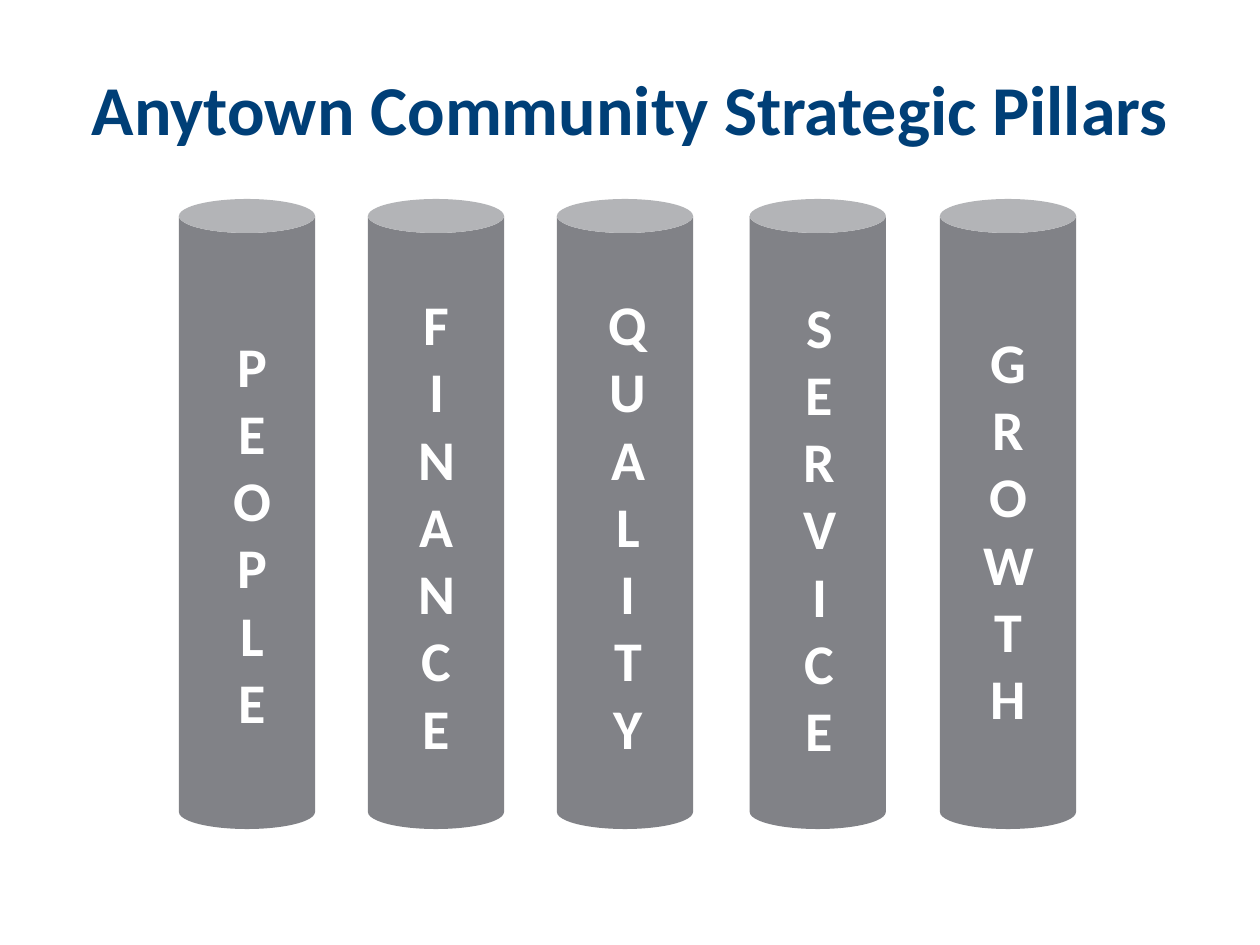
from pptx import Presentation
from pptx.dml.color import RGBColor
from pptx.enum.shapes import MSO_SHAPE as SHAPE
from pptx.enum.text import MSO_ANCHOR as ANCHOR, MSO_AUTO_SIZE as AUTO_SIZE, PP_ALIGN as ALIGN
from pptx.util import Inches, Pt

NAVY = RGBColor(0x00, 0x3F, 0x77)
GRAY = RGBColor(0x81, 0x82, 0x87)
WHITE = RGBColor(0xFF, 0xFF, 0xFF)
FONT = "Calibri"

PILLAR_TOP, PILLAR_WIDTH, PILLAR_HEIGHT = 1.58, 1.08, 5
LABEL_WIDTH = 0.67
PILLARS = [
    ("PEOPLE", 1.42, 0.25, 1.0),
    ("FINANCE", 2.92, 0.21, 0.67),
    ("QUALITY", 4.42, 0.23, 0.67),
    ("SERVICE", 5.95, 0.22, 0.69),
    ("GROWTH", 7.46, 0.21, 0.97),
]


def add_run(p, text, size, color):
    """Add a bold run to a centred paragraph."""
    p.alignment = ALIGN.CENTER
    r = p.add_run()
    r.text = text
    r.font.name = FONT
    r.font.size = Pt(size)
    r.font.bold = True
    r.font.color.rgb = color


def add_title(slide, text, left, top, width, height):
    """Place and format the title placeholder."""
    sp = slide.shapes.title
    sp.left, sp.top = Inches(left), Inches(top)
    sp.width, sp.height = Inches(width), Inches(height)
    tf = sp.text_frame
    tf.word_wrap = True
    tf.auto_size = AUTO_SIZE.NONE
    tf.vertical_anchor = ANCHOR.MIDDLE
    p = tf.paragraphs[0]
    p.line_spacing = 0.75
    add_run(p, text, 40, NAVY)


def add_pillar(slide, word, left, top, width, height, label_dx, label_dy):
    """Group a can with its word set one letter to a line."""
    shapes = slide.shapes.add_group_shape().shapes
    can = shapes.add_shape(SHAPE.CAN, Inches(left), Inches(top), Inches(width), Inches(height))
    can.shadow.inherit = False
    can.fill.solid()
    can.fill.fore_color.rgb = GRAY
    can.line.fill.background()

    label_height = 0.1 + 0.54 * len(word)
    label = shapes.add_textbox(Inches(left + label_dx), Inches(top + label_dy),
                               Inches(LABEL_WIDTH), Inches(label_height))
    tf = label.text_frame
    tf.word_wrap = True
    tf.auto_size = AUTO_SIZE.SHAPE_TO_FIT_TEXT
    for i, letter in enumerate(word):
        p = tf.add_paragraph() if i else tf.paragraphs[0]
        add_run(p, letter, 32, WHITE)


def main():
    """Build and save the slide."""
    prs = Presentation()
    prs.slide_width, prs.slide_height = Inches(10), Inches(7.5)
    slide = prs.slides.add_slide(prs.slide_layouts[5])
    add_title(slide, "Anytown Community Strategic Pillars", 0.5, 0.3, 9, 1.25)
    for word, left, label_dx, label_dy in PILLARS:
        add_pillar(slide, word, left, PILLAR_TOP, PILLAR_WIDTH, PILLAR_HEIGHT, label_dx, label_dy)
    prs.save("out.pptx")


if __name__ == "__main__":
    main()
